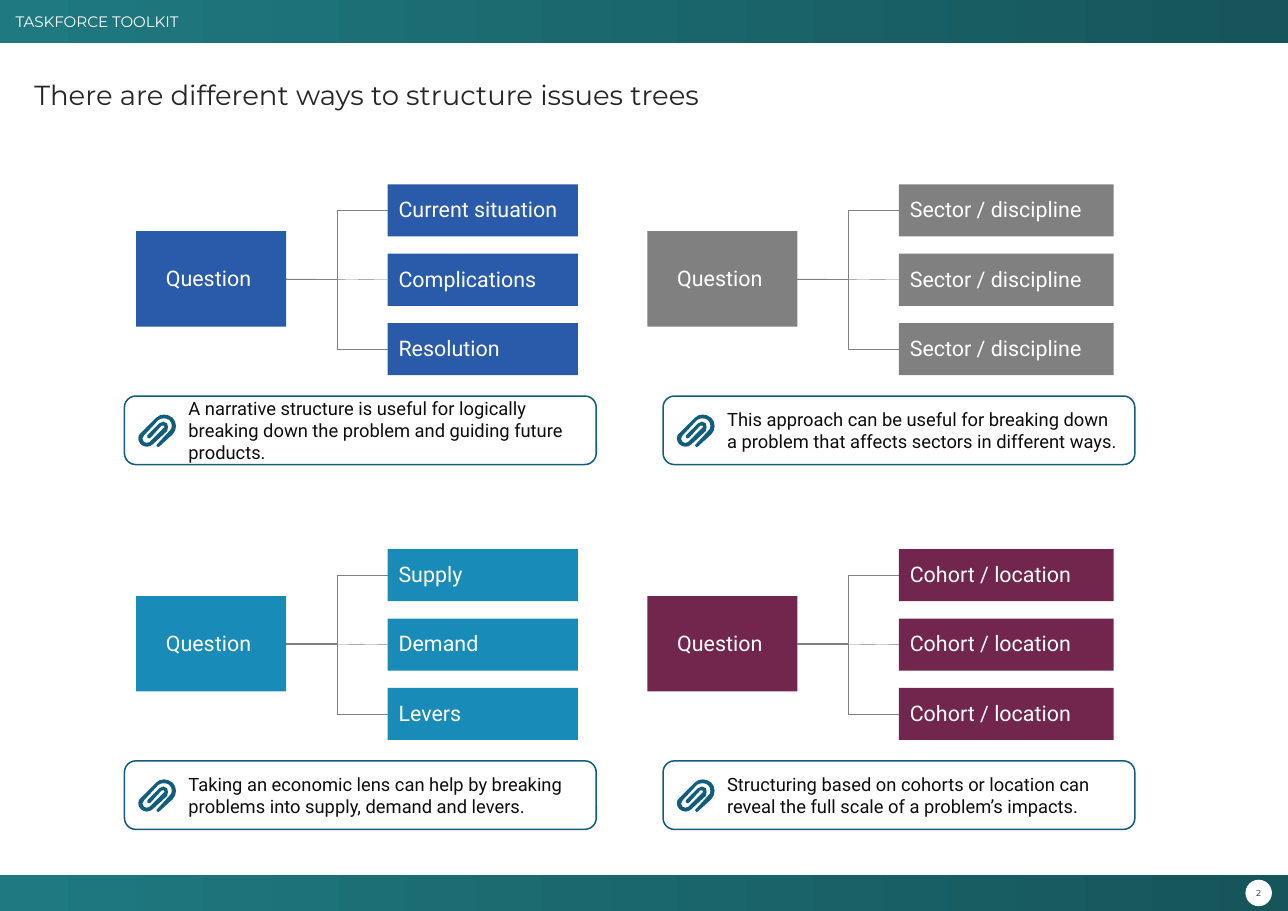
from dataclasses import dataclass

from lxml.etree import SubElement
from pptx import Presentation
from pptx.dml.color import RGBColor
from pptx.enum.shapes import MSO_CONNECTOR as Link, MSO_SHAPE as Shape
from pptx.enum.text import MSO_ANCHOR as Anchor, MSO_AUTO_SIZE as AutoSize, PP_ALIGN as Align
from pptx.oxml.ns import qn
from pptx.util import Cm, Pt


@dataclass(frozen=True)
class Theme:
    heading: str = "Montserrat"
    body: str = "Roboto"
    white: str = "FFFFFF"
    bar_start: str = "1F7980"
    bar_end: str = "16555A"
    title: str = "262626"
    number: str = "222A35"
    note: str = "0D0D0D"
    clip: str = "115D7B"
    branch: str = "808080"
    narrative: str = "2A5BAA"
    sector: str = "808080"
    economic: str = "198BB8"
    cohort: str = "73264D"
    title_size: float = 18
    box_size: float = 14
    note_size: float = 12
    header_size: float = 9.9
    number_size: float = 5.7


theme = Theme()


def add_block(shapes, kind, bounds, fill=None):
    """Add a shape without shadow or outline; bounds are left, top, width, height in cm."""
    block = shapes.add_shape(kind, *map(Cm, bounds))
    block.shadow.inherit = False
    block.line.fill.background()
    if fill:
        block.fill.solid()
        block.fill.fore_color.rgb = RGBColor.from_string(fill)
    return block


def write(box, text, font, size, color, align=Align.LEFT, spacing=1.0, **frame_format):
    frame = box.text_frame
    frame.text = text
    for name, value in {"vertical_anchor": Anchor.MIDDLE, "word_wrap": True, **frame_format}.items():
        setattr(frame, name, value)
    para = frame.paragraphs[0]
    para.alignment, para.line_spacing = align, spacing
    span = para.runs[0]
    for name, value in {"name": font, "size": Pt(size)}.items():
        setattr(span.font, name, value)
    span.font.color.rgb = RGBColor.from_string(color)


deck = Presentation()
deck.slide_width, deck.slide_height = Cm(29.7), Cm(21)
page = deck.slides.add_slide(deck.slide_layouts[5])

# Header, footer and page number
header = add_block(page.shapes, Shape.RECTANGLE, (0, 0, 29.7, 0.99))
footer = add_block(page.shapes, Shape.RECTANGLE, (0, 20.17, 29.7, 0.83))
for bar in (header, footer):
    bar.fill.gradient()
    bar.fill.gradient_angle = 0
    for stop, color in zip(bar.fill.gradient_stops, (theme.bar_start, theme.bar_end)):
        stop.color.rgb = RGBColor.from_string(color)
write(header, "TASKFORCE TOOLKIT", theme.heading, theme.header_size, theme.white,
      margin_left=Cm(0.36), margin_right=Cm(0.18), margin_top=Cm(0.15), margin_bottom=Cm(0.15))

no_margins = {f"margin_{side}": 0 for side in ("left", "right", "top", "bottom")}
badge = add_block(page.shapes, Shape.OVAL, (28.72, 20.28, 0.61, 0.61), theme.white)
write(badge, "2", theme.heading, theme.number_size, theme.number, Align.CENTER,
      **{**no_margins, "word_wrap": False})

# Title
title = page.shapes.title
for name, value in {"left": 0.79, "top": 1.73, "width": 19.84, "height": 1.88}.items():
    setattr(title, name, Cm(value))
write(title, "There are different ways to structure issues trees", theme.heading,
      theme.title_size, theme.title, spacing=1.1, vertical_anchor=Anchor.TOP,
      auto_size=AutoSize.NONE, **no_margins)

# Paperclip outline in hundredths of an inch: pairs end straight edges, sixes are Bézier curves
clip_start = (32, 19)
clip_steps = [
    (20, 30), (19, 31, 18, 31, 18, 30), (17, 30, 17, 28, 18, 28),
    (29, 16), (32, 14, 32, 9, 29, 6), (26, 4, 22, 4, 19, 6),
    (6, 20), (4, 22, 4, 24, 6, 26), (7, 27, 10, 27, 11, 26),
    (24, 13), (25, 13, 25, 12, 24, 11), (24, 11, 23, 11, 22, 11),
    (12, 22), (11, 23, 10, 23, 9, 22), (9, 21, 9, 20, 9, 20),
    (20, 9), (22, 7, 25, 7, 27, 9), (28, 11, 28, 14, 27, 16),
    (14, 28), (11, 31, 6, 31, 3, 28), (0, 25, 0, 20, 3, 18),
    (17, 4), (21, 0, 27, 0, 32, 4), (36, 8, 36, 15, 32, 19),
]
clip_points = []
for step in clip_steps:
    curve = step * 3 if len(step) == 2 else step
    clip_points += zip(curve[::2], curve[1::2])

# Issue trees, two by two, each with a note below
trees = [
    (theme.narrative, ("Current situation", "Complications", "Resolution"),
     "A narrative structure is useful for logically breaking down the problem "
     "and guiding future products."),
    (theme.sector, ("Sector / discipline",) * 3,
     "This approach can be useful for breaking down a problem that affects "
     "sectors in different ways."),
    (theme.economic, ("Supply", "Demand", "Levers"),
     "Taking an economic lens can help by breaking problems into supply, "
     "demand and levers."),
    (theme.cohort, ("Cohort / location",) * 3,
     "Structuring based on cohorts or location can reveal the full scale of "
     "a problem’s impacts."),
]
for index, (color, answers, advice) in enumerate(trees):
    row, column = divmod(index, 2)
    left, top = 3.14 + 11.79 * column, 4.25 + 8.41 * row
    answer_width = (4.39, 4.95)[column]

    question = add_block(page.shapes, Shape.RECTANGLE, (left, top + 1.08, 3.46, 2.2), color)
    write(question, "Question ", theme.body, theme.box_size, theme.white, Align.CENTER, 0.95)

    for level, answer in enumerate(answers):
        bounds = (left + 5.8, top + 1.6 * level, answer_width, 1.2)
        box = add_block(page.shapes, Shape.RECTANGLE, bounds, color)
        write(box, answer, theme.body, theme.box_size, theme.white, spacing=0.95)
        kind = Link.STRAIGHT if level == 1 else Link.ELBOW
        branch = page.shapes.add_connector(kind, 0, 0, 0, 0)
        branch.begin_connect(question, 3)
        branch.end_connect(box, 1)
        branch.line.width = Pt(0.25)
        branch.line.color.rgb = RGBColor.from_string(theme.branch)
        SubElement(branch._element.spPr, qn("a:effectLst"))

    note_left, note_top = 2.87 + 12.42 * column, top + 4.88
    group = page.shapes.add_group_shape()
    note = add_block(group.shapes, Shape.ROUNDED_RECTANGLE,
                     (note_left, note_top, 10.88, 1.58), theme.white)
    note.line.width = Pt(1)
    note.line.color.rgb = RGBColor.from_string(theme.clip)
    write(note, advice, theme.body, theme.note_size, theme.note, margin_left=Cm(1.4),
          margin_right=Cm(0.3), margin_top=Cm(0.3), margin_bottom=Cm(0.3))

    outline = group.shapes.build_freeform(*clip_start, scale=Cm(2.54) / 100)
    outline.add_line_segments(clip_points, close=True)
    clip = outline.convert_to_shape(Cm(note_left + 0.3), Cm(note_top + 0.4))
    clip.shadow.inherit = False
    clip.fill.solid()
    clip.fill.fore_color.rgb = RGBColor.from_string(theme.clip)
    clip.line.fill.background()

    # Every three straight segments become one Bézier curve
    edges = list(clip._element.iter(qn("a:lnTo")))
    for first, second, third in zip(edges[::3], edges[1::3], edges[2::3]):
        first.tag = qn("a:cubicBezTo")
        for edge in (second, third):
            first.append(edge[0])
            edge.getparent().remove(edge)

deck.save("out.pptx")
